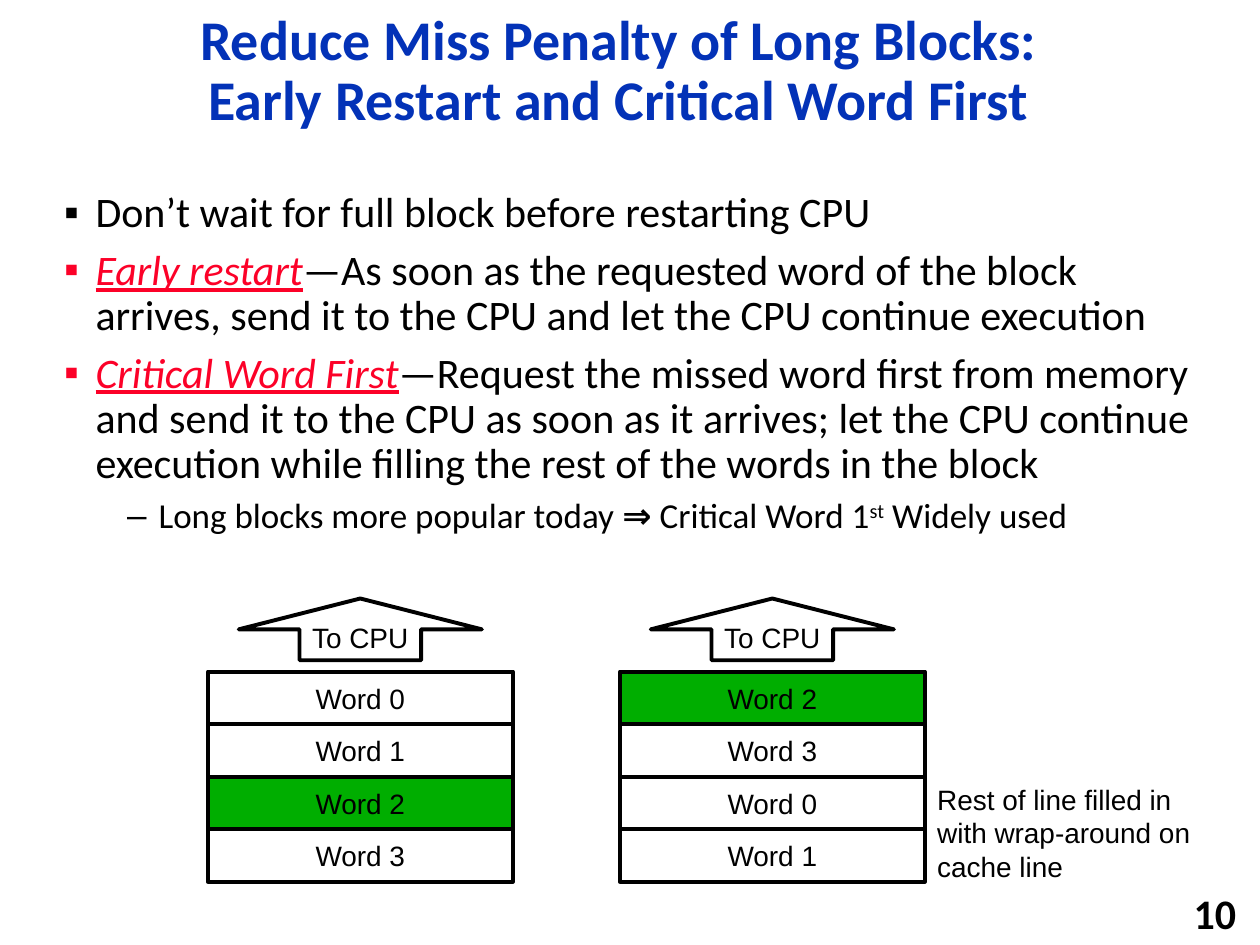
from dataclasses import dataclass

from lxml.etree import SubElement
from pptx import Presentation
from pptx.dml.color import RGBColor
from pptx.enum.shapes import MSO_SHAPE
from pptx.enum.text import MSO_ANCHOR, PP_ALIGN
from pptx.oxml.ns import qn
from pptx.util import Inches, Pt


@dataclass(frozen=True)
class Theme:
    heading_font: str = "Calibri"
    diagram_font: str = "Arial"
    ink: RGBColor = RGBColor(0x00, 0x00, 0x00)
    title: RGBColor = RGBColor(0x03, 0x32, 0xB7)
    term: RGBColor = RGBColor(0xFC, 0x01, 0x28)
    requested: RGBColor = RGBColor(0x00, 0xAE, 0x00)
    title_size: int = 32
    body_size: int = 24
    detail_size: int = 20
    diagram_size: int = 16
    outline: float = 2.25


class SlideBuilder:
    def __init__(self, page, theme):
        self.page = page
        self.theme = theme

    def add_span(self, para, text, size, font, color=None, bold=False,
                 term=False, superscript=False):
        span = para.add_run()
        span.text = text
        span.font.size = Pt(size)
        span.font.name = font
        span.font.bold = bold
        span.font.color.rgb = self.theme.term if term else color or self.theme.ink
        if term:
            span.font.italic = True
            span.font.underline = True
        if superscript:
            span._r.get_or_add_rPr().set("baseline", "30000")

    def text_box(self, left, top, width, height, anchor=MSO_ANCHOR.TOP, wrap=True):
        box = self.page.shapes.add_textbox(
            Inches(left), Inches(top), Inches(width), Inches(height))
        box.text_frame.word_wrap = wrap
        box.text_frame.vertical_anchor = anchor
        return box.text_frame

    def title(self, lines):
        frame = self.text_box(0.92, 0.17, 7.98, 0.81, MSO_ANCHOR.MIDDLE)
        para = frame.paragraphs[0]
        para.alignment = PP_ALIGN.CENTER
        para.line_spacing = 0.9
        for index, line in enumerate(lines):
            if index:
                para.add_line_break()
            self.add_span(para, line, self.theme.title_size,
                          self.theme.heading_font, self.theme.title, bold=True)

    def bullet(self, para, mark, indent, size, space, spans):
        para.line_spacing = 0.9
        para.space_before = Pt(space)
        properties = para._p.get_or_add_pPr()
        properties.set("marL", str(Inches(indent)))
        properties.set("indent", str(Inches(-0.25)))
        SubElement(properties, qn("a:buFont")).set("typeface", "Arial")
        SubElement(properties, qn("a:buChar")).set("char", mark)
        for text, style in spans:
            self.add_span(para, text, size, self.theme.heading_font, **style)

    def body(self, points, detail):
        frame = self.text_box(0.41, 1.47, 9.19, 3.12)
        for index, spans in enumerate(points):
            para = frame.add_paragraph() if index else frame.paragraphs[0]
            self.bullet(para, "▪", 0.25, self.theme.body_size,
                        7 if index else 0, spans)
        para = frame.add_paragraph()
        para.level = 1
        self.bullet(para, "–", 0.75, self.theme.detail_size, 6, detail)

    def labelled_shape(self, kind, left, top, width, height, label,
                       fill=None, wrap=True):
        shape = self.page.shapes.add_shape(
            kind, Inches(left), Inches(top), Inches(width), Inches(height))
        shape.shadow.inherit = False
        if fill is None:
            shape.fill.background()
        else:
            shape.fill.solid()
            shape.fill.fore_color.rgb = fill
        shape.line.color.rgb = self.theme.ink
        shape.line.width = Pt(self.theme.outline)
        frame = shape.text_frame
        frame.word_wrap = wrap
        frame.vertical_anchor = MSO_ANCHOR.MIDDLE
        para = frame.paragraphs[0]
        para.alignment = PP_ALIGN.CENTER
        self.add_span(para, label, self.theme.diagram_size, self.theme.diagram_font)

    def cache_line(self, left, order, requested):
        width, pitch = 2.42, 0.417
        for row, word in enumerate(order):
            self.labelled_shape(
                MSO_SHAPE.RECTANGLE, left, 5.33 + row * pitch, width, pitch,
                f"Word {word}", self.theme.requested if word == requested else None)
        arrow_width = 1.93
        self.labelled_shape(
            MSO_SHAPE.UP_ARROW, left + (width - arrow_width) / 2, 4.75,
            arrow_width, 0.49, "To CPU", wrap=False)

    def note(self, text):
        frame = self.text_box(7.34, 6.16, 2.33, 0.91)
        self.add_span(frame.paragraphs[0], text, self.theme.diagram_size,
                      self.theme.diagram_font)

    def page_number(self, number):
        frame = self.text_box(7.83, 7.08, 2.08, 0.32, MSO_ANCHOR.MIDDLE, wrap=False)
        para = frame.paragraphs[0]
        para.alignment = PP_ALIGN.RIGHT
        self.add_span(para, number, self.theme.body_size,
                      self.theme.heading_font, bold=True)


def main():
    deck = Presentation()
    deck.slide_width, deck.slide_height = Inches(10), Inches(7.5)
    page = deck.slides.add_slide(deck.slide_layouts[6])
    builder = SlideBuilder(page, Theme())

    # Title and page number
    builder.title(["Reduce Miss Penalty of Long Blocks:",
                   "Early Restart and Critical Word First"])
    builder.page_number("10")

    # Bulleted explanation
    plain, term = {}, {"term": True}
    builder.body(
        points=[
            [("Don’t wait for full block before restarting CPU", plain)],
            [("Early restart", term),
             ("—As soon as the requested word of the block arrives, send it to "
              "the CPU and let the CPU continue execution", plain)],
            [("Critical Word First", term),
             ("—Request the missed word first from memory and send it to the CPU "
              "as soon as it arrives; let the CPU continue execution while "
              "filling the rest of the words in the block", plain)],
        ],
        detail=[("Long blocks more popular today ", plain),
                ("⇒", {"bold": True}),
                (" Critical Word 1", plain),
                ("st", {"superscript": True}),
                (" Widely used", plain)])

    # Fill order: early restart, then critical word first
    builder.cache_line(1.65, order=[0, 1, 2, 3], requested=2)
    builder.cache_line(4.92, order=[2, 3, 0, 1], requested=2)
    builder.note("Rest of line filled in with wrap-around on cache line")

    deck.save("out.pptx")


if __name__ == "__main__":
    main()
